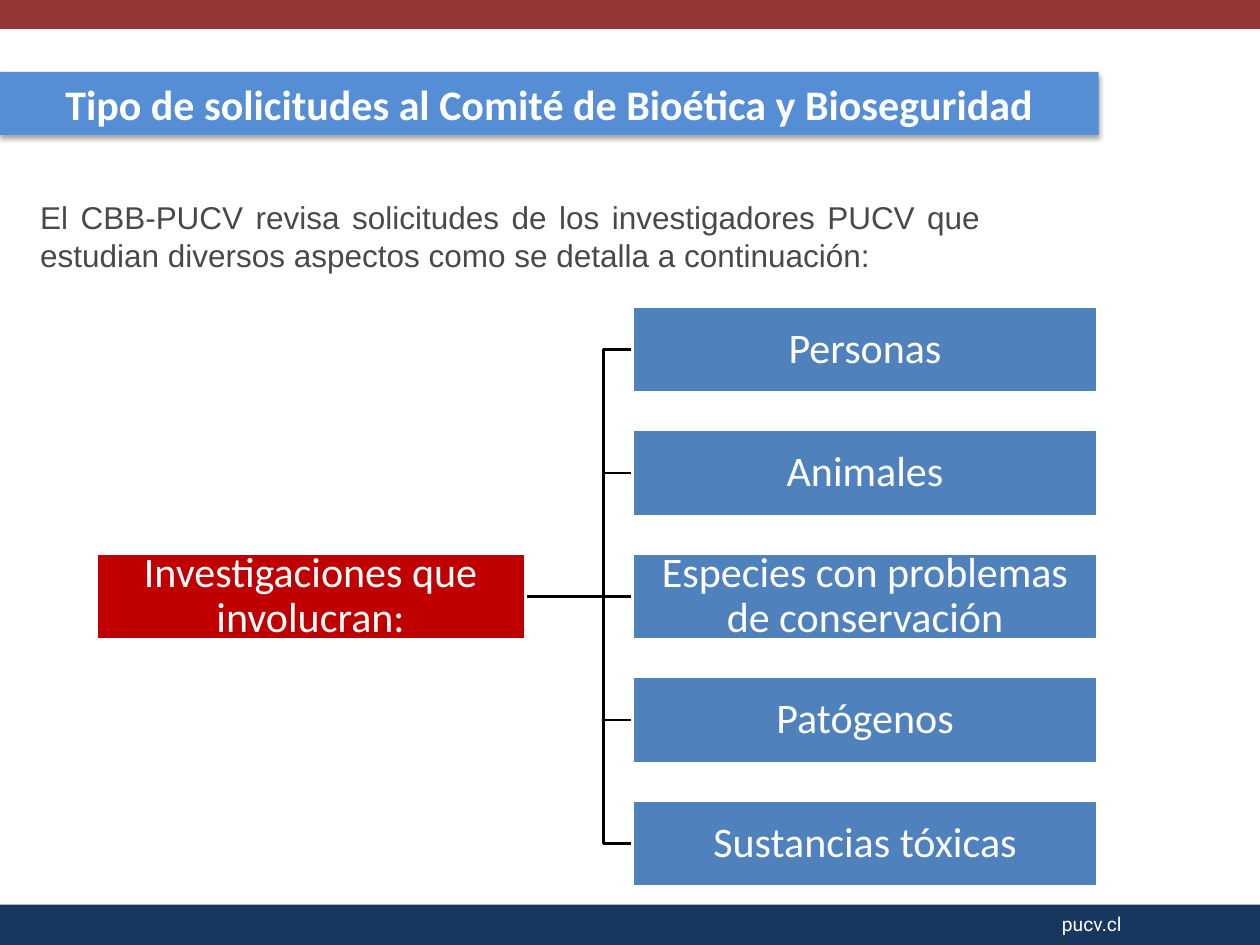
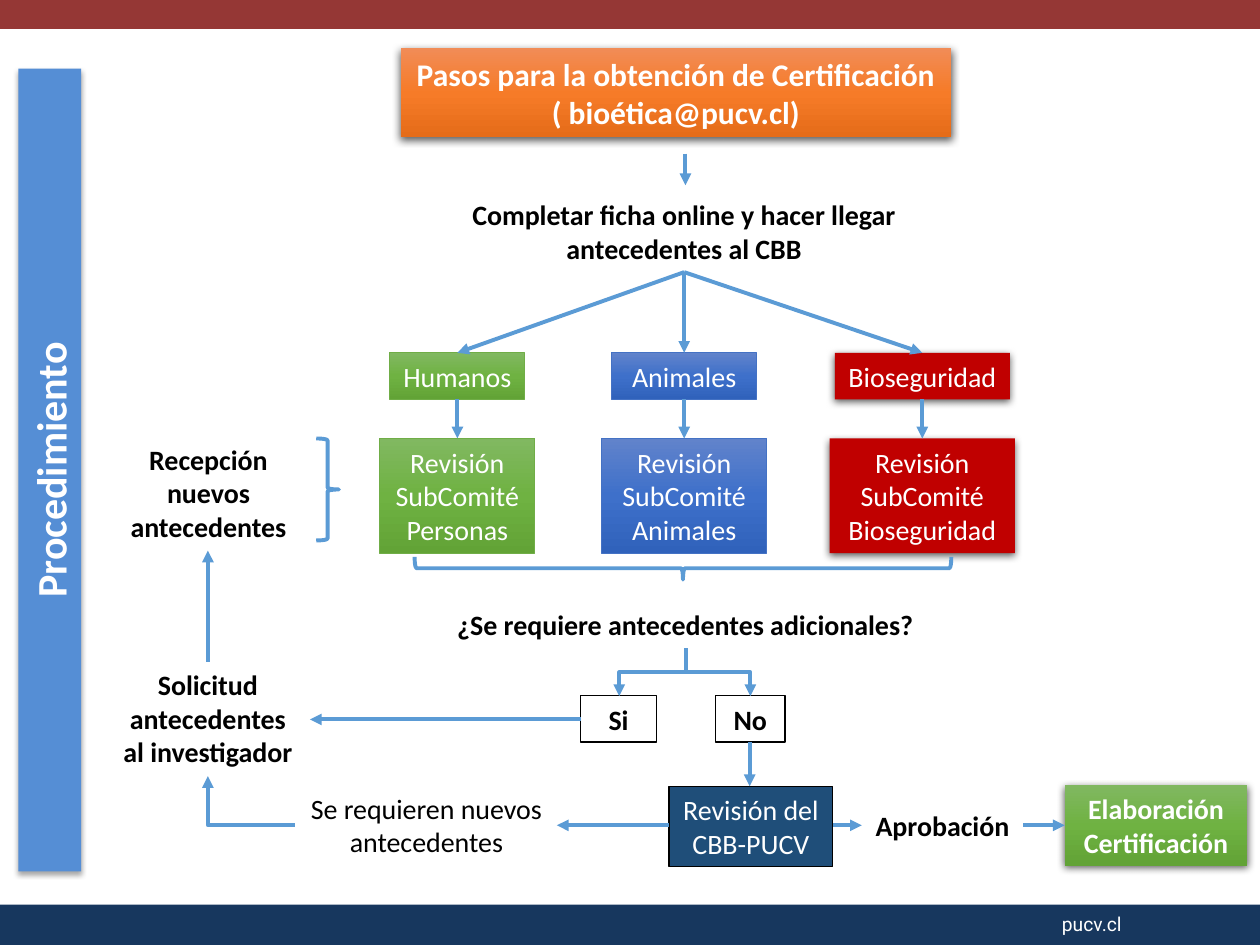
from copy import deepcopy
from dataclasses import dataclass
from typing import NamedTuple

from lxml import etree
from pptx import Presentation
from pptx import util as u
from pptx.dml import color
from pptx.enum import shapes as es, text as et
from pptx.oxml import ns

COLS, ROWS = 100, 75
WIDE, HIGH = u.Inches(10), u.Inches(7.5)
NAVY, MAROON, BAND, STEEL, RED = "17375E", "953735", "558ED5", "4F81BD", "C00000"
WHITE, BLACK, GREY, ARROW = "FFFFFF", "000000", "4A4949", "5B9BD5"
GREEN = ("81B861", "6FB242", "62A336")
BLUE = ("6183CB", "3E70CA", "3062BB")
ORANGE = ("F18C57", "F67B28", "E56C19")
ALIGN = et.PP_ALIGN


class Cell(NamedTuple):
    col: float
    row: float
    wide: float
    high: float


class Shade(NamedTuple):
    alpha: int
    blur: float
    dist: float


SOFT, DEEP = Shade(35, 3.1, 1.8), Shade(63, 4.5, 1.5)


@dataclass(frozen=True)
class Look:
    fill: str | tuple | None = None
    edge: str | None = None
    thick: float = 0.75
    shade: Shade | None = None
    ink: str = WHITE


@dataclass(frozen=True)
class Type:
    size: float = 16
    bold: bool = False
    face: str = "Calibri"
    align: ALIGN = ALIGN.CENTER
    lead: float | None = None
    inset: float | None = None
    wrap: bool = True


@dataclass(frozen=True)
class Box:
    words: str
    cell: Cell
    look: Look = Look()
    type: Type = Type()


@dataclass(frozen=True)
class Area:
    name: str
    mid: float
    head: float
    body: float
    look: Look
    task: str


PLAIN = Look(ink=BLACK)
FRAME = Look(edge=BLACK, ink=BLACK)
TITLE = Look(BAND, shade=SOFT)
BOLD = Type(bold=True)
HEAD = Type(24, True)
NODE = Type(24, lead=0.9, inset=0.2)


def across(cols: float) -> int:
    return round(WIDE * cols / COLS)


def down(rows: float) -> int:
    return round(HIGH * rows / ROWS)


def place(cell: Cell) -> tuple:
    return across(cell.col), down(cell.row), across(cell.wide), down(cell.high)


def tint(code: str) -> color.RGBColor:
    return color.RGBColor.from_string(code)


def paint(shape, look: Look) -> None:
    shape.shadow.inherit = False
    if look.fill is None:
        shape.fill.background()
    elif isinstance(look.fill, str):
        shape.fill.solid()
        shape.fill.fore_color.rgb = tint(look.fill)
    else:
        shape.fill.gradient()
        shape.fill.gradient_angle = 270
        stops = next(shape.element.iter(ns.qn("a:gsLst")))
        stops.append(deepcopy(stops[0]))
        for stop, spot, code in zip(shape.fill.gradient_stops, (0, 0.5, 1), look.fill):
            stop.position = spot
            stop.color.rgb = tint(code)
    if look.edge:
        shape.line.color.rgb = tint(look.edge)
        shape.line.width = u.Pt(look.thick)
    else:
        shape.line.fill.background()
    if look.shade:
        cast = etree.SubElement(
            shape.element.spPr.find(ns.qn("a:effectLst")), ns.qn("a:outerShdw"),
            blurRad=str(u.Pt(look.shade.blur)), dist=str(u.Pt(look.shade.dist)),
            dir="5400000", algn="t", rotWithShape="0")
        black = etree.SubElement(cast, ns.qn("a:srgbClr"), val=BLACK)
        etree.SubElement(black, ns.qn("a:alpha"), val=str(look.shade.alpha * 1000))


def write(shape, words: str, kind: Type, ink: str) -> None:
    frame = shape.text_frame
    frame.text = words
    frame.word_wrap = kind.wrap
    frame.auto_size = et.MSO_AUTO_SIZE.NONE
    if kind.inset is not None:
        frame.margin_left = frame.margin_right = across(kind.inset)
        frame.margin_top = frame.margin_bottom = down(kind.inset)
    for para in frame.paragraphs:
        para.alignment = kind.align
        if kind.lead:
            para.line_spacing = kind.lead
        font = para.font
        font.name, font.size, font.bold = kind.face, u.Pt(kind.size), kind.bold
        font.color.rgb = tint(ink)


def draw(slide, box: Box):
    if box.look.fill or box.look.edge:
        shape = slide.shapes.add_shape(es.MSO_SHAPE.RECTANGLE, *place(box.cell))
        paint(shape, box.look)
    else:
        shape = slide.shapes.add_textbox(*place(box.cell))
    if box.words:
        write(shape, box.words, box.type, box.look.ink)
    return shape


def head(slide, words: str, cell: Cell, turn: float = 0) -> None:
    title = slide.shapes.title
    title.left, title.top, title.width, title.height = place(cell)
    title.rotation = turn
    paint(title, TITLE)
    write(title, words, HEAD, WHITE)


def link(slide, start: tuple, end: tuple, kind=es.MSO_CONNECTOR.STRAIGHT,
         code: str = ARROW, thick: float = 2.25, tip: bool = True):
    line = slide.shapes.add_connector(
        kind, across(start[0]), down(start[1]), across(end[0]), down(end[1]))
    line.line.color.rgb = tint(code)
    line.line.width = u.Pt(thick)
    props = line.element.spPr
    if tip:
        etree.SubElement(props.find(ns.qn("a:ln")), ns.qn("a:tailEnd"), type="triangle")
    etree.SubElement(props, ns.qn("a:effectLst"))
    return line


def elbow(slide, cell: Cell, turn: int, flip: bool = False, bends: int = 3) -> None:
    left, right = cell.col, cell.col + cell.wide
    if flip:
        left, right = right, left
    line = link(slide, (left, cell.row), (right, cell.row + cell.high),
                es.MSO_CONNECTOR.ELBOW)
    props = line.element.spPr
    props.find(ns.qn("a:xfrm")).set("rot", str(turn * 60000))
    props.find(ns.qn("a:prstGeom")).set("prst", f"bentConnector{bends}")


def brace(slide, cell: Cell, turn: float = 0) -> None:
    shape = slide.shapes.add_shape(es.MSO_SHAPE.RIGHT_BRACE, *place(cell))
    shape.rotation = turn
    paint(shape, Look(edge=ARROW, thick=2.25))


def trunk(slide, points: list) -> None:
    spots = [(across(col), down(row)) for col, row in points]
    build = slide.shapes.build_freeform(*spots[0])
    build.add_line_segments(spots[1:], close=False)
    paint(build.convert_to_shape(), Look(edge=BLACK, thick=1.5))


def share(master, slide) -> None:
    bands = [
        Box("", Cell(0, 71.8, COLS, 3.2), Look(NAVY)),
        Box("pucv.cl", Cell(83.3, 71.9, 16.7, 3.1),
            type=Type(11, face="Roboto", align=ALIGN.LEFT)),
        Box("", Cell(0, 0, COLS, 2.3), Look(MAROON)),
    ]
    for band in bands:
        master.shapes.element.append(draw(slide, band).element)


def kinds(slide) -> None:
    head(slide, "Tipo de solicitudes al Comité de Bioética y Bioseguridad",
         Cell(0, 5.7, 87.2, 5))
    topics = ["Personas", "Animales", "Especies con problemas\nde conservación",
              "Patógenos", "Sustancias tóxicas"]
    first, step, high = 24.3, 9.8, 6.9
    stem, fork, edge = 41.7, 47.9, 50.2
    hub = first + 2 * step
    axis = hub + high / 2
    for turn in range(len(topics)):
        row = axis + (turn - 2) * step
        if row == axis:
            link(slide, (stem, axis), (edge, axis), code=BLACK, thick=1.5, tip=False)
        else:
            trunk(slide, [(stem, axis), (fork, axis), (fork, row), (edge, row)])
    draw(slide, Box("Investigaciones que involucran:", Cell(7.6, hub, 34.1, high),
                    Look(RED, WHITE, 2), NODE))
    for turn, topic in enumerate(topics):
        draw(slide, Box(topic, Cell(edge, first + turn * step, 36.9, high),
                        Look(STEEL, WHITE, 2), NODE))
    draw(slide, Box(
        "El CBB-PUCV revisa solicitudes de los investigadores PUCV que estudian "
        "diversos aspectos como se detalla a continuación:",
        Cell(2.2, 15.2, 76.6, 7.1), Look(ink=GREY),
        Type(18, face="Arial", align=ALIGN.JUSTIFY)))


def steps(slide) -> None:
    head(slide, "Procedimiento", Cell(-27.9, 34.8, 63.7, 5), 270)
    areas = [
        Area("Humanos", 36.3, 10.7, 12.3, Look(GREEN, "70AD47", 0.5),
             "Revisión SubComité\nPersonas"),
        Area("Animales", 54.3, 11.5, 13.1, Look(BLUE, "4472C4", 0.5),
             "Revisión\nSubComité Animales"),
        Area("Bioseguridad", 73.2, 13.9, 14.7, Look(RED, shade=DEEP),
             "Revisión SubComité\nBioseguridad"),
    ]
    for area in areas:
        draw(slide, Box(area.name, Cell(area.mid - area.head / 2, 28, area.head, 3.7),
                        area.look, Type(wrap=False)))
        draw(slide, Box(area.task, Cell(area.mid - area.body / 2, 34.8, area.body, 9.1),
                        area.look))
        link(slide, (54.3, 21.6), (area.mid, 28))
        link(slide, (area.mid, 31.7), (area.mid, 34.8))
    boxes = [
        Box("Pasos para la obtención de Certificación\n( bioética@pucv.cl)",
            Cell(31.8, 3.8, 43.7, 7.1), Look(ORANGE, shade=DEEP),
            Type(18, True, wrap=False)),
        Box("Completar ficha online y hacer llegar antecedentes al CBB",
            Cell(36.3, 15.2, 36, 6.4), PLAIN, BOLD),
        Box("Recepción nuevos antecedentes", Cell(9.2, 34.6, 14.7, 9.1), PLAIN, BOLD),
        Box("¿Se requiere antecedentes adicionales?", Cell(34.9, 47.7, 39, 3.7),
            PLAIN, BOLD),
        Box("Solicitud antecedentes al investigador", Cell(8.4, 52.5, 16.2, 9.1),
            PLAIN, BOLD),
        Box("Si", Cell(46.1, 55.2, 6, 3.7), FRAME, BOLD),
        Box("No", Cell(56.8, 55.2, 5.5, 3.7), FRAME, BOLD),
        Box("Se requieren nuevos antecedentes", Cell(23.5, 62.3, 20.7, 6.4), PLAIN),
        Box("Revisión del CBB-PUCV", Cell(53.1, 62.4, 13, 6.4), Look("1F4E79", BLACK)),
        Box("Aprobación", Cell(68.4, 63.7, 12.8, 3.7), PLAIN, BOLD),
        Box("Elaboración Certificación", Cell(84.5, 62.3, 14.5, 6.4),
            Look(GREEN, shade=DEEP), BOLD),
    ]
    for box in boxes:
        draw(slide, box)
    brace(slide, Cell(53.3, 23.8, 1.8, 42.6), 90)
    brace(slide, Cell(25.1, 34.8, 1.8, 8.1))
    arrows = [
        ((54.4, 12.2), (54.4, 14.7)), ((46.1, 57.1), (24.6, 57.1)),
        ((16.5, 52.5), (16.5, 43.7)), ((59.5, 58.9), (59.5, 62.4)),
        ((66.1, 65.5), (68.4, 65.5)), ((53.1, 65.5), (44.2, 65.5)),
        ((81.2, 65.5), (84.5, 65.5)),
    ]
    for start, end in arrows:
        link(slide, start, end)
    elbow(slide, Cell(49.9, 50.7, 3.8, 5.3), 90)
    elbow(slide, Cell(55.1, 50.8, 3.8, 5.1), 270, flip=True)
    elbow(slide, Cell(16.5, 61.6, 6.9, 3.9), 180, bends=2)


def main() -> None:
    deck = Presentation()
    deck.slide_width, deck.slide_height = WIDE, HIGH
    layout = deck.slide_layouts[5]
    pages = [deck.slides.add_slide(layout) for _ in range(2)]
    share(deck.slide_master, pages[0])
    kinds(pages[0])
    steps(pages[1])
    deck.save("out.pptx")


if __name__ == "__main__":
    main()
